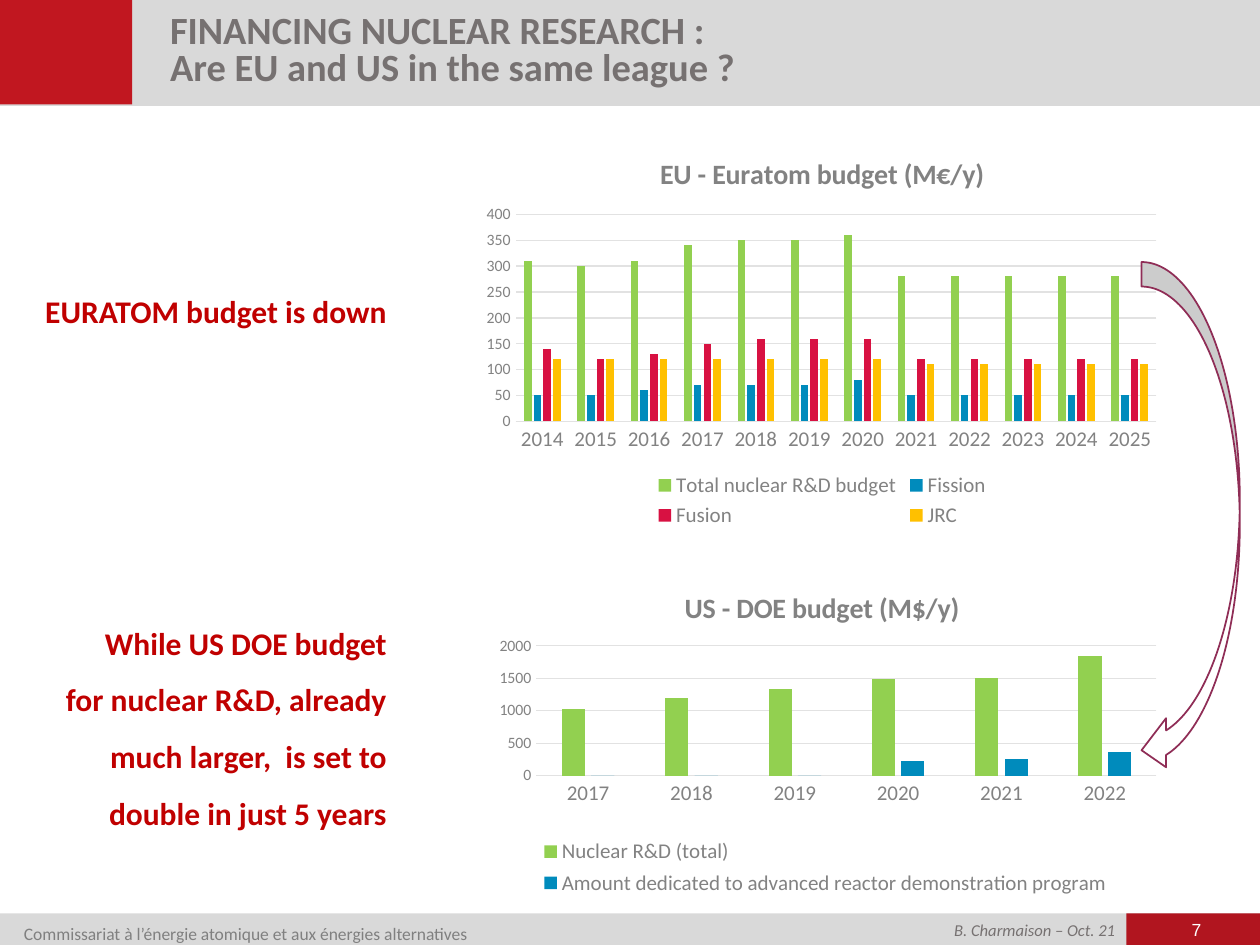
from pptx import Presentation
from pptx.chart.data import CategoryChartData
from pptx.dml.color import RGBColor
from pptx.enum import chart as ch, shapes, text
from pptx.oxml import parse_xml
from pptx.util import Inches, Pt

WHITE = RGBColor(0xFF, 0xFF, 0xFF)
PALE = RGBColor(0xD9, 0xD9, 0xD9)
GRID = RGBColor(0xE2, 0xE2, 0xE2)
GREY = RGBColor(0x82, 0x82, 0x82)
FOOT = RGBColor(0x80, 0x80, 0x80)
SLATE = RGBColor(0x76, 0x71, 0x71)
RED = RGBColor(0xC1, 0x17, 0x20)
DARK = RGBColor(0xB1, 0x15, 0x1F)
CLARET = RGBColor(0xC0, 0x00, 0x00)
PLUM = RGBColor(0x8F, 0x2D, 0x56)
HUES = [RGBColor(0x92, 0xD0, 0x50), RGBColor(0x00, 0x8B, 0xBC),
        RGBColor(0xD8, 0x11, 0x42), RGBColor(0xFF, 0xC0, 0x00)]
LEFT, MID, RIGHT = (text.PP_ALIGN.LEFT, text.PP_ALIGN.CENTER,
                    text.PP_ALIGN.RIGHT)

EU = {
    "Total nuclear R&D budget":
        [310, 300, 310, 340, 350, 350, 360] + [280] * 5,
    "Fission": [50, 50, 60, 70, 70, 70, 80] + [50] * 5,
    "Fusion": [140, 120, 130, 150, 160, 160, 160] + [120] * 5,
    "JRC": [120] * 7 + [110] * 5,
}
US = {
    "Nuclear R&D (total)": [1020, 1200, 1330, 1490, 1510, 1840],
    "Amount dedicated to advanced reactor demonstration program":
        [0, 0, 0, 230, 250, 370],
}


def scale(box):
    """Turn a box given in inches into lengths."""
    return [Inches(v) for v in box]


def style(font, size, hue, bold=False, italic=False, name="Calibri"):
    """Set the look of a font."""
    font.name, font.size = name, Pt(size)
    font.bold, font.italic = bold, italic
    font.color.rgb = hue


def block(slide, box, fill, kind=shapes.MSO_SHAPE.RECTANGLE, line=None):
    """Add a filled shape, outlined if a line colour is given."""
    shape = slide.shapes.add_shape(kind, *scale(box))
    shape.shadow.inherit = False
    shape.fill.solid()
    shape.fill.fore_color.rgb = fill
    if line is None:
        shape.line.fill.background()
    else:
        shape.line.color.rgb = line
        shape.line.width = Pt(1)


def label(slide, box, words, size, hue, align=LEFT, space=1.0,
          inset=(0.1, 0.05), anchor=text.MSO_ANCHOR.TOP, **look):
    """Add one paragraph of wrapped text."""
    frame = slide.shapes.add_textbox(*scale(box)).text_frame
    frame.word_wrap = True
    frame.vertical_anchor = anchor
    frame.margin_left = frame.margin_right = Inches(inset[0])
    frame.margin_top = frame.margin_bottom = Inches(inset[1])
    frame.text = words
    para = frame.paragraphs[0]
    para.alignment, para.line_spacing = align, space
    for run in para.runs:
        style(run.font, size, hue, **look)


def header(slide, box):
    """Draw the title band."""
    x, y, w, h = box
    block(slide, box, PALE)
    block(slide, (x - 0.01, y, 1.06, h - 0.01), RED)
    label(slide, (x + 1.21, y + 0.09, w - 1.21, 0.71),
          "FINANCING NUCLEAR RESEARCH :\vAre EU and US in the same league ?",
          22, SLATE, space=0.8, inset=(0.14, 0.05),
          anchor=text.MSO_ANCHOR.MIDDLE, bold=True)


def footer(slide, box):
    """Draw the bottom band with owner, author and page."""
    x, y, w, h = box
    block(slide, box, PALE)
    block(slide, (x + w - 1.06, y, 1.06, h), DARK)
    label(slide, (x + 0.11, y + 0.01, 4.52, 0.21),
          "Commissariat à l’énergie atomique et aux énergies alternatives",
          10, FOOT, space=1.4, inset=(0.08, 0))
    label(slide, (x + 6.09, y, 2.86, 0.27), "B. Charmaison – Oct. 21",
          9.5, SLATE, align=RIGHT, italic=True)
    label(slide, (x + 9.15, y + 0.04, 0.69, 0.17), "7", 10, WHITE,
          align=MID, inset=(0.08, 0), name="Arial")


def claim(slide, box, words):
    """Write a red statement beside a chart."""
    label(slide, box, words, 18, CLARET, align=RIGHT, space=1.5,
          inset=(0.14, 0.07), bold=True)


def place(part, spot, slot, target=""):
    """Fix a chart part at fractions of the chart."""
    for old in part.xpath("c:layout"):
        part.remove(old)
    marks = "".join(f'<c:{k} val="{v}"/>' for k, v in zip("xywh", spot))
    part.insert(slot, parse_xml(
        '<c:layout xmlns:c="http://schemas.openxmlformats.org/drawingml/'
        f'2006/chart"><c:manualLayout>{target}'
        '<c:xMode val="edge"/><c:yMode val="edge"/>'
        f'{marks}</c:manualLayout></c:layout>'))


def budget(slide, box, title, start, rows, top, step, plot, key=None):
    """Add a clustered column chart of yearly budgets."""
    data = CategoryChartData(number_format="0")
    count = len(next(iter(rows.values())))
    data.categories = [str(start + i) for i in range(count)]
    for name, vals in rows.items():
        data.add_series(name, vals)
    chart = slide.shapes.add_chart(
        ch.XL_CHART_TYPE.COLUMN_CLUSTERED, *scale(box), data).chart
    style(chart.font, 10, GREY)
    chart.has_title = True
    head = chart.chart_title.text_frame
    head.text = title
    style(head.paragraphs[0].runs[0].font, 16, GREY, bold=True)
    chart.chart_title.include_in_layout = False
    chart.has_legend = True
    chart.legend.position = ch.XL_LEGEND_POSITION.BOTTOM
    chart.legend.include_in_layout = False
    style(chart.legend.font, 12, GREY)
    cols = chart.plots[0]
    cols.vary_by_categories = False
    cols.gap_width, cols.overlap = 219, -27
    for bar, hue in zip(cols.series, HUES):
        bar.format.fill.solid()
        bar.format.fill.fore_color.rgb = hue
    years, money = chart.category_axis, chart.value_axis
    for axis, size in ((years, 12), (money, 9)):
        axis.major_tick_mark = axis.minor_tick_mark = ch.XL_TICK_MARK.NONE
        style(axis.tick_labels.font, size, GREY)
    money.minimum_scale, money.maximum_scale = 0, top
    money.major_unit = step
    money.format.line.fill.background()
    for line in (years.format.line, money.major_gridlines.format.line):
        line.color.rgb = GRID
        line.width = Pt(0.75)
    place(cols._element.getparent(), plot, 0,
          '<c:layoutTarget val="inner"/>')
    if key:
        place(chart.legend._element, key, 1)


def main():
    """Build the slide."""
    prs = Presentation()
    prs.slide_width, prs.slide_height = Inches(10), Inches(7.5)
    slide = prs.slides.add_slide(prs.slide_layouts[6])
    header(slide, (0, -0.03, 10, 0.87))
    footer(slide, (0, 7.25, 10, 0.26))
    claim(slide, (-0.15, 2.1, 3.36, 0.55), "EURATOM budget is down")
    budget(slide, (3.76, 1.07, 5.53, 3.16), "EU - Euratom budget (M€/y)",
           2014, EU, 400, 50, (0.06, 0.2, 0.92, 0.52))
    budget(slide, (3.76, 4.52, 5.53, 3.03), "US - DOE budget (M$/y)",
           2017, US, 2000, 500, (0.09, 0.2, 0.89, 0.34),
           (0.08, 0.69, 0.85, 0.18))
    block(slide, (9.06, 2.08, 0.78, 4.07), WHITE,
          shapes.MSO_SHAPE.CURVED_LEFT_ARROW, PLUM)
    claim(slide, (0.36, 4.73, 2.85, 1.96),
          "While US DOE budget for nuclear R&D, already much larger,  "
          "is set to double in just 5 years")
    prs.save("out.pptx")


if __name__ == "__main__":
    main()
